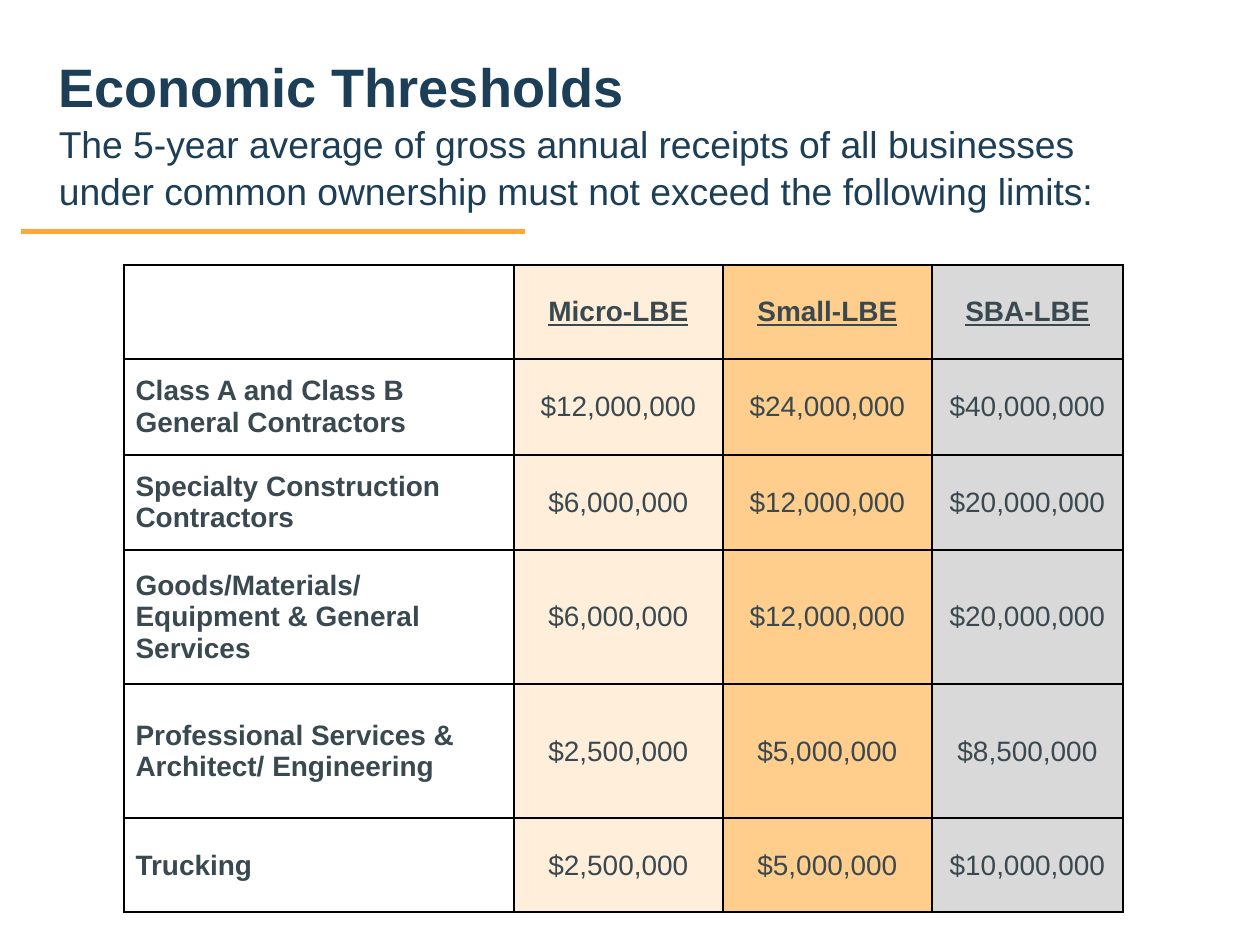
from lxml import etree
from pptx import Presentation
from pptx.dml.color import RGBColor
from pptx.enum.shapes import MSO_CONNECTOR
from pptx.enum.text import MSO_ANCHOR, PP_ALIGN
from pptx.oxml.ns import qn
from pptx.util import Cm, Pt

# Content
TITLE_LINES = [
    ("Economic Thresholds", 23.2, True),
    ("The 5-year average of gross annual receipts of all businesses "
     "under common ownership must not exceed the following limits:", 16, False),
]
THRESHOLDS = [
    ("", "Micro-LBE", "Small-LBE", "SBA-LBE"),
    ("Class A and Class B General Contractors",
     "$12,000,000", "$24,000,000", "$40,000,000"),
    ("Specialty Construction Contractors",
     "$6,000,000", "$12,000,000", "$20,000,000"),
    ("Goods/Materials/\nEquipment & General Services",
     "$6,000,000", "$12,000,000", "$20,000,000"),
    ("Professional Services & Architect/ Engineering",
     "$2,500,000", "$5,000,000", "$8,500,000"),
    ("Trucking", "$2,500,000", "$5,000,000", "$10,000,000"),
]

# Style
FONT = "Arial"
NAVY = RGBColor(0x1C, 0x3E, 0x57)
SLATE = RGBColor(0x3A, 0x49, 0x50)
ORANGE = RGBColor(0xFE, 0xA8, 0x3A)
BLACK = RGBColor(0x00, 0x00, 0x00)
COLUMN_FILLS = [
    None,
    RGBColor(0xFF, 0xEE, 0xD9),
    RGBColor(0xFF, 0xCD, 0x8C),
    RGBColor(0xD9, 0xD9, 0xD9),
]
MIDDLE = MSO_ANCHOR.MIDDLE
LEFT, CENTER = PP_ALIGN.LEFT, PP_ALIGN.CENTER
STRAIGHT = MSO_CONNECTOR.STRAIGHT

# Layout in centimetres
COLUMN_WIDTHS = [5.9, 3.16, 3.16, 2.89]
ROW_HEIGHTS = [1.41, 1.45, 1.44, 2.03, 2.03, 1.42]
TABLE_LEFT, TABLE_TOP = 1.87, 4.01
RULE_LEFT, RULE_RIGHT, RULE_Y = 0.32, 7.94, 3.5


def format_font(font, size, color, bold):
    font.name = FONT
    font.size = Pt(size)
    font.color.rgb = color
    font.bold = bold


def add_borders(cell, color, width):
    properties = cell._tc.get_or_add_tcPr()
    for index, side in enumerate(("a:lnL", "a:lnR", "a:lnT", "a:lnB")):
        border = etree.Element(qn(side), w=str(Pt(width)))
        fill = etree.SubElement(border, qn("a:solidFill"))
        etree.SubElement(fill, qn("a:srgbClr"), val=str(color))
        properties.insert(index, border)


def add_title(slide):
    box = slide.shapes.add_textbox(Cm(0.64), Cm(0.48), Cm(17.46), Cm(3.02))
    frame = box.text_frame
    frame.word_wrap = True
    frame.vertical_anchor = MIDDLE
    frame.margin_left = frame.margin_top = frame.margin_bottom = Cm(0.25)
    frame.margin_right = Cm(0.5)
    frame.text = "\n".join(text for text, _, _ in TITLE_LINES)
    for paragraph, (_, size, bold) in zip(frame.paragraphs, TITLE_LINES):
        paragraph.line_spacing = 1.05
        format_font(paragraph.runs[0].font, size, NAVY, bold)


def fill_cell(cell, text, row, column):
    cell.vertical_anchor = MIDDLE
    cell.margin_left = cell.margin_right = Cm(0.18)
    cell.margin_top = cell.margin_bottom = Cm(0.1)
    color = COLUMN_FILLS[column]
    if color is None:
        cell.fill.background()
    else:
        cell.fill.solid()
        cell.fill.fore_color.rgb = color
    add_borders(cell, BLACK, 1)

    cell.text_frame.text = text
    for paragraph in cell.text_frame.paragraphs:
        paragraph.alignment = CENTER if column else LEFT
        for run in paragraph.runs:
            format_font(run.font, 12, SLATE, row == 0 or column == 0)
            run.font.underline = row == 0


def add_threshold_table(slide):
    table = slide.shapes.add_table(
        len(THRESHOLDS), len(COLUMN_WIDTHS), Cm(TABLE_LEFT), Cm(TABLE_TOP),
        Cm(sum(COLUMN_WIDTHS)), Cm(sum(ROW_HEIGHTS))).table
    table.horz_banding = False
    for column, width in zip(table.columns, COLUMN_WIDTHS):
        column.width = Cm(width)
    for row, height in zip(table.rows, ROW_HEIGHTS):
        row.height = Cm(height)
    for row, values in enumerate(THRESHOLDS):
        for column, text in enumerate(values):
            fill_cell(table.cell(row, column), text, row, column)


def add_title_rule(slide):
    rule = slide.shapes.add_connector(
        STRAIGHT, Cm(RULE_LEFT), Cm(RULE_Y), Cm(RULE_RIGHT), Cm(RULE_Y))
    rule.line.color.rgb = ORANGE
    rule.line.width = Pt(2.25)
    etree.SubElement(rule._element.spPr, qn("a:effectLst"))


def main():
    presentation = Presentation()
    presentation.slide_width = Cm(19.05)
    presentation.slide_height = Cm(14.28)
    slide = presentation.slides.add_slide(presentation.slide_layouts[6])
    add_title(slide)
    add_threshold_table(slide)
    add_title_rule(slide)
    presentation.save("out.pptx")


if __name__ == "__main__":
    main()
